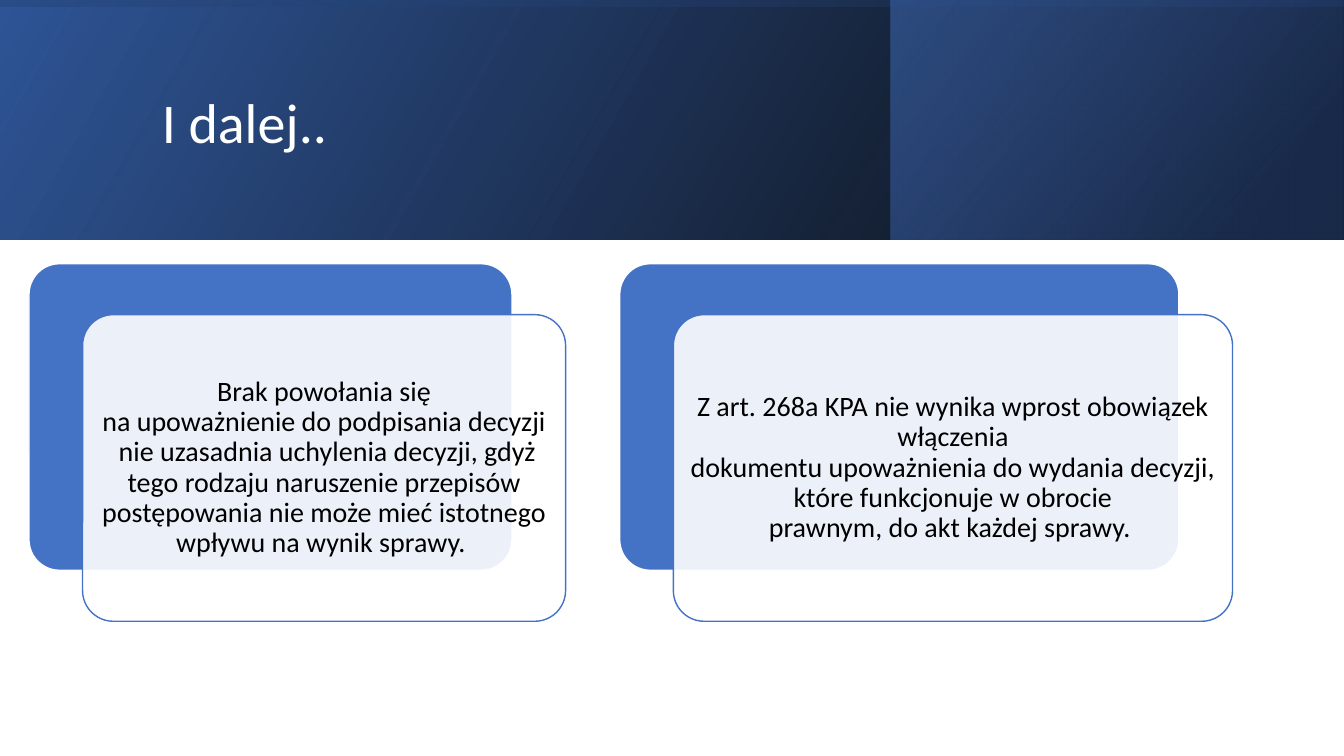
from lxml.etree import SubElement
from pptx import Presentation
from pptx.dml.color import RGBColor
from pptx.enum.shapes import MSO_SHAPE as Shape
from pptx.enum.text import MSO_ANCHOR as Anchor, PP_ALIGN as Align
from pptx.oxml.ns import qn
from pptx.util import Pt

COLORS = {
    "white": "FFFFFF",
    "black": "000000",
    "blue": "4472C4",
    "dark_blue": "2F5597",
    "navy": "203864",
}
FONT = "Calibri"
NO_BREAK_SPACE = chr(160)
SLIDE_WIDTH, SLIDE_HEIGHT = 960, 540
BANNER_HEIGHT = 171
CARD_TOP, CARD_HEIGHT = 188.4, 219
CARD_OFFSET_X, CARD_OFFSET_Y = 38.3, 36.4
CARD_INSET = 6.4

# Left edge, width and text of each card; "_" stands for a no-break space
CARDS = [
    (20.7, 345, "Brak_powołania się na_upoważnienie_do_podpisania_decyzji"
                "_nie_uzasadnia uchylenia_decyzji, gdyż tego rodzaju "
                "naruszenie przepisów postępowania_nie_może mieć istotnego "
                "wpływu na wynik_sprawy. "),
    (442.7, 399.4, "Z_art. 268a_KPA_nie_wynika wprost obowiązek włączenia "
                   "dokumentu_upoważnienia_do_wydania_decyzji, które "
                   "funkcjonuje_w_obrocie prawnym,_do_akt_każdej_sprawy._"),
]


def color(name):
    return RGBColor.from_string(COLORS[name])


def set_alpha(fill_element, percent):
    """Set the opacity of the colour inside a fill or gradient stop."""
    rgb = fill_element.find(qn("a:srgbClr"))
    SubElement(rgb, qn("a:alpha")).set("val", str(percent * 1000))


def add_gradient(slide, left, top, width, height, angle, stops, rotation=0):
    """Add a mirrored rectangle; stops are (position, colour, opacity) in percent."""
    shape = slide.shapes.add_shape(
        Shape.RECTANGLE, Pt(left), Pt(top), Pt(width), Pt(height))
    shape.shadow.inherit = False
    shape.line.fill.background()
    shape.rotation = rotation
    shape._element.spPr.find(qn("a:xfrm")).set("flipH", "1")
    shape.fill.gradient()
    shape.fill.gradient_angle = angle
    for stop, (position, name, _) in zip(shape.fill.gradient_stops, stops):
        stop.position = position / 100
        stop.color.rgb = color(name)
    elements = shape._element.spPr.iter(qn("a:gs"))
    for element, (_, _, opacity) in zip(elements, stops):
        set_alpha(element, opacity)


def add_panel(slide, left, top, width, fill, line, opacity=100):
    shape = slide.shapes.add_shape(
        Shape.ROUNDED_RECTANGLE, Pt(left), Pt(top), Pt(width), Pt(CARD_HEIGHT))
    shape.shadow.inherit = False
    shape.adjustments[0] = 0.1
    shape.fill.solid()
    shape.fill.fore_color.rgb = color(fill)
    if opacity < 100:
        set_alpha(shape._element.spPr.find(qn("a:solidFill")), opacity)
    shape.line.color.rgb = color(line)
    shape.line.width = Pt(1)


def add_text(slide, left, top, width, height, text, size, name,
             align=Align.LEFT, margins=(7.2, 3.6)):
    box = slide.shapes.add_textbox(Pt(left), Pt(top), Pt(width), Pt(height))
    frame = box.text_frame
    frame.word_wrap = True
    frame.vertical_anchor = Anchor.MIDDLE
    frame.margin_left = frame.margin_right = Pt(margins[0])
    frame.margin_top = frame.margin_bottom = Pt(margins[1])
    frame.text = text
    paragraph = frame.paragraphs[0]
    paragraph.alignment = align
    paragraph.line_spacing = 0.9
    font = paragraph.runs[0].font
    font.name, font.size = FONT, Pt(size)
    font.color.rgb = color(name)


def add_card(slide, left, width, text):
    add_panel(slide, left, CARD_TOP, width, "blue", "white")
    front_left, front_top = left + CARD_OFFSET_X, CARD_TOP + CARD_OFFSET_Y
    add_panel(slide, front_left, front_top, width, "white", "blue", opacity=90)
    add_text(slide, front_left + CARD_INSET, front_top + CARD_INSET,
             width - 2 * CARD_INSET, CARD_HEIGHT - 2 * CARD_INSET,
             text.replace("_", NO_BREAK_SPACE), 20, "black",
             Align.CENTER, margins=(6, 6))


def add_banner(slide):
    add_gradient(slide, 0, 0, SLIDE_WIDTH, BANNER_HEIGHT, 30,
                 [(0, "black", 96), (100, "dark_blue", 100)])
    add_gradient(slide, 636.4, 0, SLIDE_WIDTH - 636.4, BANNER_HEIGHT, 40,
                 [(19, "navy", 68), (100, "blue", 48)])
    # Upright strip turned to lie across the banner
    shift = (SLIDE_WIDTH - BANNER_HEIGHT) / 2
    add_gradient(slide, shift, -shift, BANNER_HEIGHT, SLIDE_WIDTH, 10,
                 [(23, "dark_blue", 16), (99, "black", 45)], rotation=270)


def main():
    presentation = Presentation()
    presentation.slide_width = Pt(SLIDE_WIDTH)
    presentation.slide_height = Pt(SLIDE_HEIGHT)
    slide = presentation.slides.add_slide(presentation.slide_layouts[6])

    # Banner and title
    add_banner(slide)
    add_text(slide, 108.6, 27.4, 765.4, 123.8, "I dalej..", 40, "white")

    # Cards
    for left, width, text in CARDS:
        add_card(slide, left, width, text)

    presentation.save("out.pptx")


if __name__ == "__main__":
    main()
